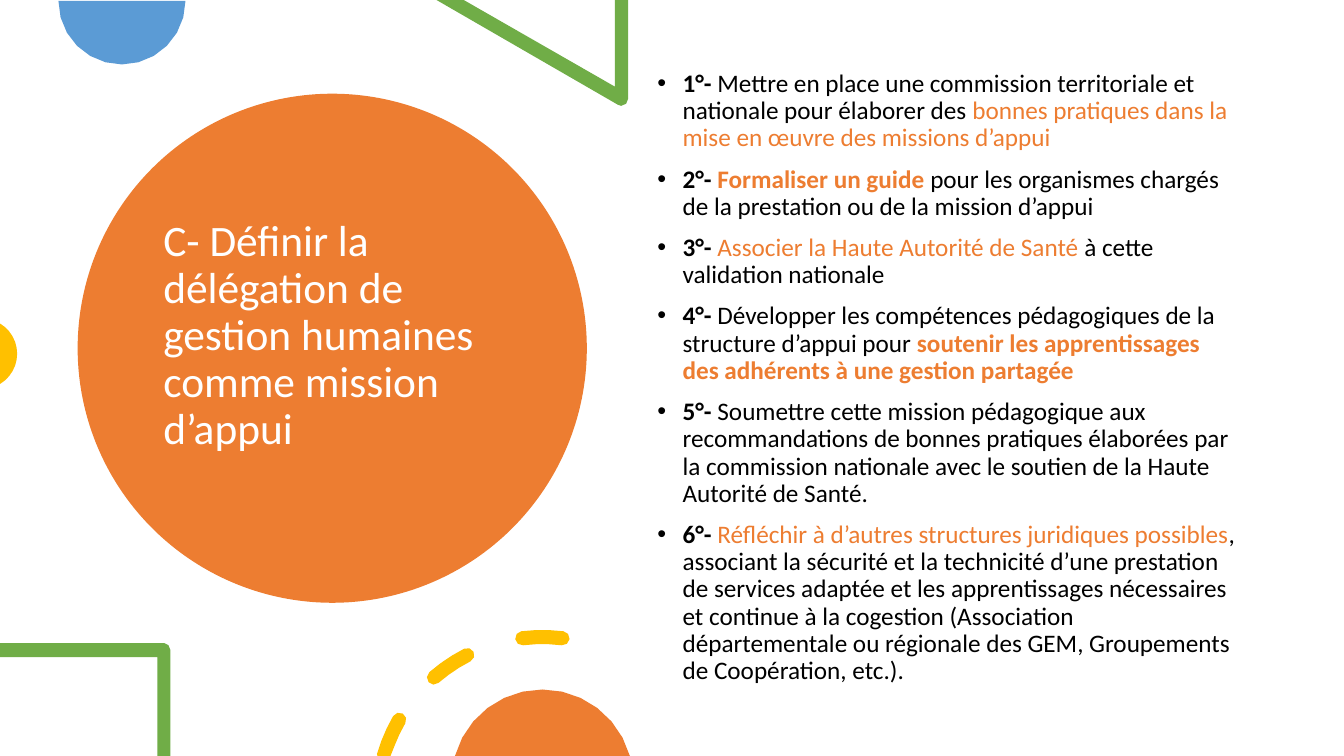
"""Build a slide on delegated management as a support mission."""
import math
from lxml import etree
from pptx import Presentation
from pptx import util as u
from pptx.dml.color import RGBColor
from pptx.enum import shapes, text
from pptx.oxml import ns

PX = 9144
WIDTH, HEIGHT = 1333, 750
ORANGE, GREEN, YELLOW, BLUE = "ED7D31", "70AD47", "FFC000", "5B9BD5"
BLACK, WHITE = "000000", "FFFFFF"

TITLE = "C- Définir la délégation de gestion humaines comme mission d’appui"
MEASURES = [
    [("1°-", BLACK, True),
     (" Mettre en place une commission territoriale et nationale pour élaborer des ", BLACK, False),
     ("bonnes pratiques dans la mise en œuvre des missions d’appui", ORANGE, False)],
    [("2°- ", BLACK, True),
     ("Formaliser un guide ", ORANGE, True),
     ("pour les organismes chargés de la prestation ou de la mission d’appui", BLACK, False)],
    [("3°- ", BLACK, True),
     ("Associer la Haute Autorité de Santé ", ORANGE, False),
     ("à cette validation nationale", BLACK, False)],
    [("4°- ", BLACK, True),
     ("Développer les compétences pédagogiques de la structure d’appui pour ", BLACK, False),
     ("soutenir les apprentissages des adhérents à une gestion partagée", ORANGE, True)],
    [("5°-", BLACK, True),
     (" Soumettre cette mission pédagogique aux recommandations de bonnes pratiques élaborées "
      "par la commission nationale avec le soutien de la Haute Autorité de Santé.", BLACK, False)],
    [("6°- ", BLACK, True),
     ("Réfléchir à d’autres structures juridiques possibles", ORANGE, False),
     (", associant la sécurité et la technicité d’une prestation de services adaptée et les "
      "apprentissages nécessaires et continue à la cogestion (Association départementale ou "
      "régionale des GEM, Groupements de Coopération, etc.).", BLACK, False)],
]
TRIANGLE = [(623, 0), (610, 0), (610, 86), (460, 0), (433, 0),
            (613, 104), (616, 105), (621, 103), (623, 98)]
SQUARE = [(163, 638), (0, 638), (0, 652), (156, 652), (156, 750),
          (169, 750), (169, 645), (167, 640)]
CUT_DISCS = [(121, 1, 63, 0, 180, BLUE), (-18, 351, 35, -59, 59, YELLOW),
             (538, 774, 90, 195.5, 344.5, ORANGE)]
DASHES = [(196.3, 210), (229, 243), (263, 277)]


def px(n):
    """Turn pixels into EMU."""
    return u.Emu(round(n * PX))


def rgb(colour):
    """Turn a hex string into a colour."""
    return RGBColor.from_string(colour)


def paint(sp, colour):
    """Fill a shape plainly, without line or shadow."""
    sp.fill.solid()
    sp.fill.fore_color.rgb = rgb(colour)
    sp.line.fill.background()
    sp.shadow.inherit = False


def polygon(s, points, colour):
    """Draw a closed outline, held within the slide."""
    held = [(px(min(max(x, 0), WIDTH)), px(min(max(y, 0), HEIGHT))) for x, y in points]
    builder = s.shapes.build_freeform(*held[0], scale=1.0)
    builder.add_line_segments(held[1:], close=True)
    paint(builder.convert_to_shape(), colour)


def arc(cx, cy, radius, start, end, steps):
    """List evenly spaced points along an arc given in degrees."""
    angles = [math.radians(start + (end - start) * i / steps) for i in range(steps + 1)]
    return [(cx + radius * math.cos(a), cy + radius * math.sin(a)) for a in angles]


def dash(s, cx, cy, radius, start, end, width, colour):
    """Draw a curved dash with round ends."""
    half = width / 2
    head, tail = (arc(cx, cy, radius, a, a, 1)[0] for a in (end, start))
    points = (arc(cx, cy, radius + half, start, end, 3)
              + arc(*head, half, end, end + 180, 4)[1:-1]
              + arc(cx, cy, radius - half, end, start, 3)
              + arc(*tail, half, start + 180, start + 360, 4)[1:-1])
    polygon(s, points, colour)


def place(s, sp, left, top, width, height):
    """Move a placeholder, bring it to the front and return its text frame."""
    sp.left, sp.top, sp.width, sp.height = px(left), px(top), px(width), px(height)
    s.shapes._spTree.append(sp._element)
    tf = sp.text_frame
    tf.word_wrap = True
    tf.auto_size = text.MSO_AUTO_SIZE.NONE
    return tf


def write(p, words, size, colour, bold=False):
    """Add a formatted run to a paragraph."""
    r = p.add_run()
    r.text = words
    r.font.name, r.font.size, r.font.bold = "Calibri", u.Pt(size), bold
    r.font.color.rgb = rgb(colour)


def bullet(p, indent):
    """Give a paragraph a hanging round bullet."""
    p_pr = p._p.get_or_add_pPr()
    p_pr.set("marL", str(px(indent)))
    p_pr.set("indent", str(-px(indent)))
    etree.SubElement(p_pr, ns.qn("a:buFont")).set("typeface", "Arial")
    etree.SubElement(p_pr, ns.qn("a:buChar")).set("char", "•")


def add_title(s):
    """Write the title over the large disc."""
    tf = place(s, s.shapes.title, 152, 135, 354, 445)
    tf.vertical_anchor = text.MSO_ANCHOR.MIDDLE
    tf.margin_bottom = px(52)
    p = tf.paragraphs[0]
    p.alignment, p.line_spacing = text.PP_ALIGN.LEFT, 0.9
    write(p, TITLE, 31, WHITE)


def add_measures(s):
    """Write the list of measures."""
    tf = place(s, s.placeholders[1], 642, 65, 647, 620)
    tf.vertical_anchor = text.MSO_ANCHOR.TOP
    tf.margin_right = px(61)
    for i, runs in enumerate(MEASURES):
        p = tf.add_paragraph() if i else tf.paragraphs[0]
        bullet(p, 25)
        p.line_spacing, p.space_before = 0.9, u.Pt(10 if i else 0)
        for words, colour, bold in runs:
            write(p, words, 18, colour, bold=bold)


def main():
    """Build and save the slide."""
    prs = Presentation()
    prs.slide_width, prs.slide_height = px(WIDTH), px(HEIGHT)
    s = prs.slides.add_slide(prs.slide_layouts[1])
    disc = s.shapes.add_shape(shapes.MSO_SHAPE.OVAL, px(77), px(93), px(505), px(505))
    paint(disc, ORANGE)
    for cx, cy, radius, start, end, colour in CUT_DISCS:
        polygon(s, arc(cx, cy, radius, start, end, 12), colour)
    polygon(s, TRIANGLE, GREEN)
    polygon(s, SQUARE, GREEN)
    for start, end in DASHES:
        dash(s, 538, 796, 164, start, end, 14, YELLOW)
    add_title(s)
    add_measures(s)
    prs.save("out.pptx")


if __name__ == "__main__":
    main()
